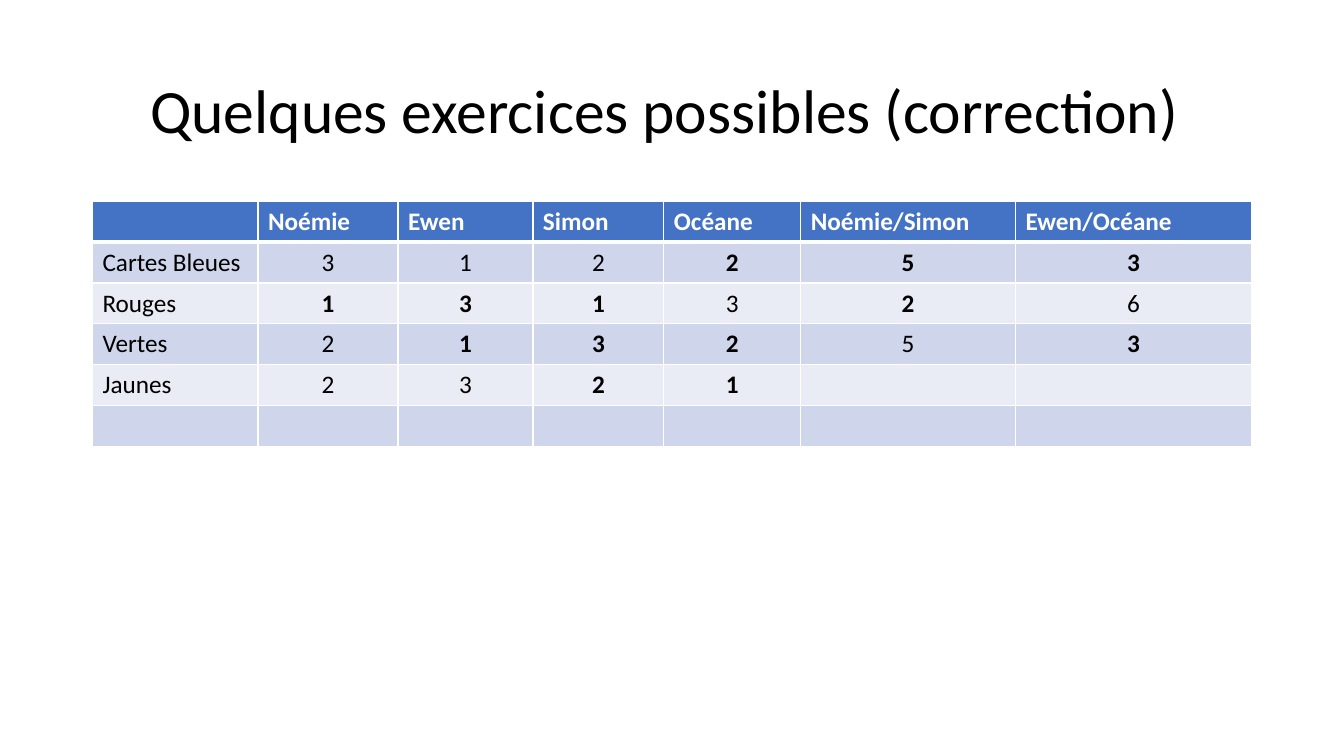
from lxml.etree import SubElement
from pptx import Presentation
from pptx.dml.color import RGBColor
from pptx.enum.text import MSO_ANCHOR as Anchor, PP_ALIGN as Align
from pptx.oxml.ns import qn
from pptx.util import Cm, Pt


def add_run(paragraph, text, size, color, bold=False):
    run = paragraph.add_run()
    run.text = text
    run.font.name = "Calibri"
    run.font.size = Pt(size)
    run.font.bold = bold
    run.font.color.rgb = RGBColor.from_string(color)


def set_borders(cell, top, bottom):
    """Draw white cell borders; top and bottom are widths in points."""
    properties = cell._tc.get_or_add_tcPr()
    widths = {"a:lnL": 1, "a:lnR": 1, "a:lnT": top, "a:lnB": bottom}
    for position, (side, width) in enumerate(widths.items()):
        border = SubElement(properties, qn(side), w=str(Pt(width)))
        SubElement(SubElement(border, qn("a:solidFill")), qn("a:srgbClr"), val="FFFFFF")
        properties.insert(position, border)  # borders precede the fill


LEFT, WIDTH = Cm(2.33), Cm(29.21)
COLUMN_WIDTHS = [4.17, 3.53, 3.4, 3.3, 3.45, 5.41, 5.95]
ROW_HEIGHT = 1.03
HEADER_FILL, BAND_FILLS = "4472C4", ["E9EBF5", "CFD5EA"]

# A trailing * marks an answer, shown in bold
CARDS = [
    ["", "Noémie", "Ewen", "Simon", "Océane", "Noémie/Simon", "Ewen/Océane"],
    ["Cartes Bleues", "3", "1", "2", "2*", "5*", "3*"],
    ["Rouges", "1*", "3*", "1*", "3", "2*", "6"],
    ["Vertes", "2", "1*", "3*", "2*", "5", "3*"],
    ["Jaunes", "2", "3", "2*", "1*", "", ""],
    [""] * 7,
]

deck = Presentation()
deck.slide_width, deck.slide_height = Cm(33.87), Cm(19.05)
slide = deck.slides.add_slide(deck.slide_layouts[6])

title = slide.shapes.add_textbox(LEFT, Cm(1.01), WIDTH, Cm(3.68)).text_frame
title.word_wrap = True
title.vertical_anchor = Anchor.MIDDLE
heading = title.paragraphs[0]
heading.alignment = Align.CENTER
heading.line_spacing = 0.9
add_run(heading, "Quelques exercices possibles (correction) ", 44, "000000")

card_table = slide.shapes.add_table(
    len(CARDS), len(COLUMN_WIDTHS), LEFT, Cm(5.07), WIDTH, Cm(ROW_HEIGHT * len(CARDS))
).table
for column, width in zip(card_table.columns, COLUMN_WIDTHS):
    column.width = Cm(width)

for r, entries in enumerate(CARDS):
    card_table.rows[r].height = Cm(ROW_HEIGHT)
    is_header = r == 0
    for c, entry in enumerate(entries):
        cell = card_table.cell(r, c)
        cell.fill.solid()
        fill = HEADER_FILL if is_header else BAND_FILLS[r % 2]
        cell.fill.fore_color.rgb = RGBColor.from_string(fill)
        set_borders(cell, top=3 if r == 1 else 1, bottom=3 if is_header else 1)
        if entry:
            paragraph = cell.text_frame.paragraphs[0]
            paragraph.alignment = Align.LEFT if is_header or c == 0 else Align.CENTER
            add_run(paragraph, entry.rstrip("*"), 18,
                    "FFFFFF" if is_header else "000000",
                    bold=is_header or entry.endswith("*"))

deck.save("out.pptx")
